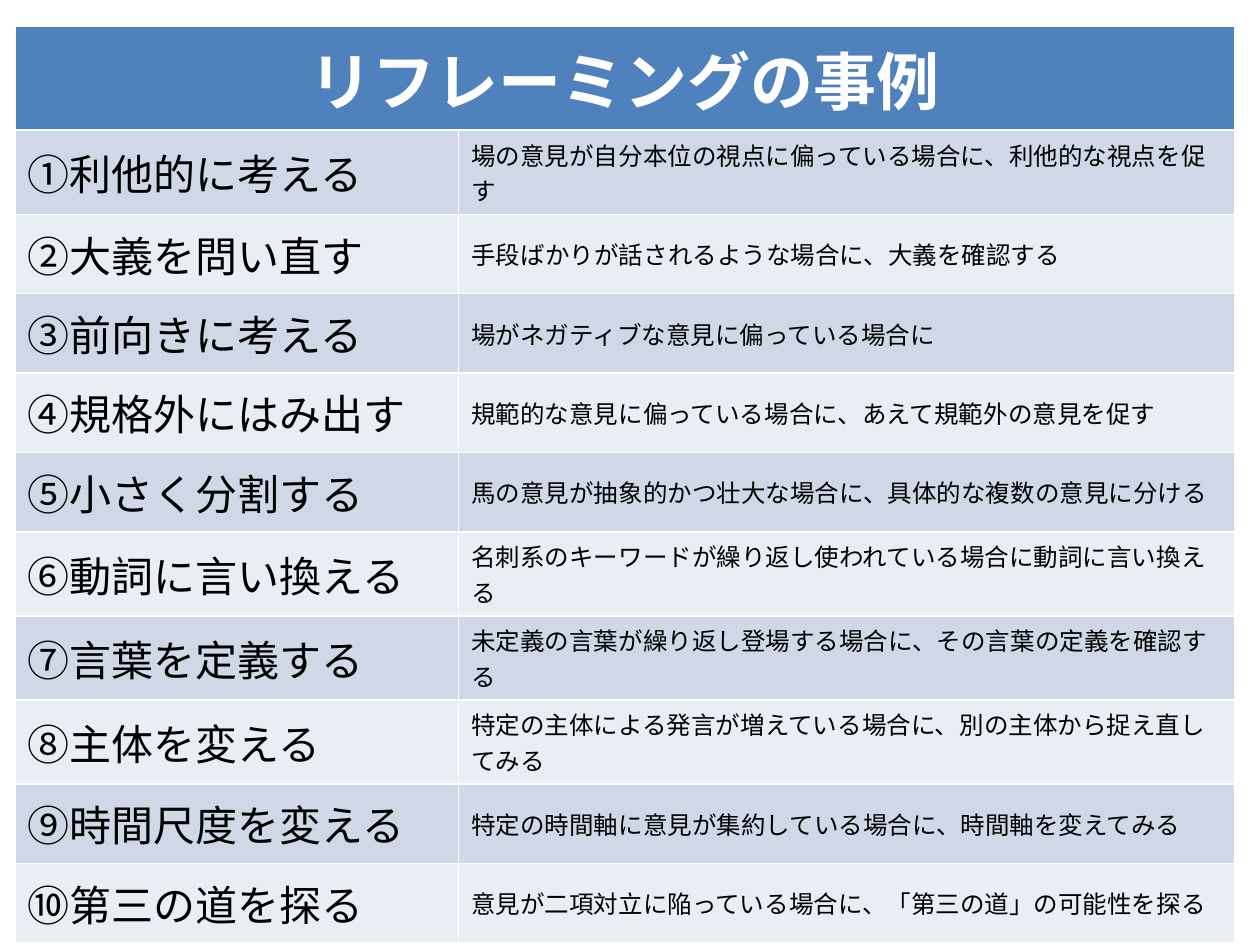
from dataclasses import dataclass

from pptx import Presentation
from pptx.dml.color import RGBColor as RGB
from pptx.enum.text import MSO_ANCHOR as Anchor, PP_ALIGN as Align
from pptx.util import Inches, Pt


@dataclass(frozen=True)
class Theme:
    font: str = "Calibri"
    header_fill: str = "4F81BD"
    bands: tuple = ("D0D8E8", "E9EDF4")
    header_text: str = "FFFFFF"
    body_text: str = "000000"
    title_size: int = 36
    term_size: int = 24
    note_size: int = 14


THEME = Theme()

TITLE = "リフレーミングの事例"
EXAMPLES = [
    ("①利他的に考える", "場の意見が自分本位の視点に偏っている場合に、利他的な視点を促す"),
    ("②大義を問い直す", "手段ばかりが話されるような場合に、大義を確認する"),
    ("③前向きに考える", "場がネガティブな意見に偏っている場合に"),
    ("④規格外にはみ出す", "規範的な意見に偏っている場合に、あえて規範外の意見を促す"),
    ("⑤小さく分割する", "馬の意見が抽象的かつ壮大な場合に、具体的な複数の意見に分ける"),
    ("⑥動詞に言い換える", "名刺系のキーワードが繰り返し使われている場合に動詞に言い換える"),
    ("⑦言葉を定義する", "未定義の言葉が繰り返し登場する場合に、その言葉の定義を確認する"),
    ("⑧主体を変える", "特定の主体による発言が増えている場合に、別の主体から捉え直してみる"),
    ("⑨時間尺度を変える", "特定の時間軸に意見が集約している場合に、時間軸を変えてみる"),
    ("⑩第三の道を探る", "意見が二項対立に陥っている場合に、「第三の道」の可能性を探る"),
]


def fill_cell(cell, text, fill, color, size, bold=False, align=Align.LEFT):
    cell.fill.solid()
    cell.fill.fore_color.rgb = RGB.from_string(fill)
    cell.vertical_anchor = Anchor.MIDDLE
    p = cell.text_frame.paragraphs[0]
    p.alignment = align
    r = p.add_run()
    r.text = text
    r.font.color.rgb = RGB.from_string(color)
    for name, value in {"name": THEME.font, "size": Pt(size), "bold": bold}.items():
        setattr(r.font, name, value)


def add_examples_table(s, left, top, width, height):
    """Table with a merged title row above banded term and note rows."""
    header_height, term_width = Inches(0.79), Inches(3.52)
    table = s.shapes.add_table(len(EXAMPLES) + 1, 2, left, top, width, height).table
    table.columns[0].width = term_width
    table.columns[1].width = width - term_width
    row_height = (height - header_height) // len(EXAMPLES)
    for i, row in enumerate(table.rows):
        row.height = row_height if i else header_height

    # Title row
    title = table.cell(0, 0)
    title.merge(table.cell(0, 1))
    fill_cell(title, TITLE, THEME.header_fill, THEME.header_text,
              THEME.title_size, bold=True, align=Align.CENTER)

    # Banded rows
    sizes = (THEME.term_size, THEME.note_size)
    for i, example in enumerate(EXAMPLES):
        band = THEME.bands[i % 2]
        for j, (text, size) in enumerate(zip(example, sizes)):
            fill_cell(table.cell(i + 1, j), text, band, THEME.body_text, size)


def main():
    prs = Presentation()
    prs.slide_width, prs.slide_height = Inches(10), Inches(7.5)
    s = prs.slides.add_slide(prs.slide_layouts[6])
    add_examples_table(s, Inches(0.12), Inches(0.21), Inches(9.68), Inches(7.09))
    prs.save("out.pptx")


if __name__ == "__main__":
    main()
